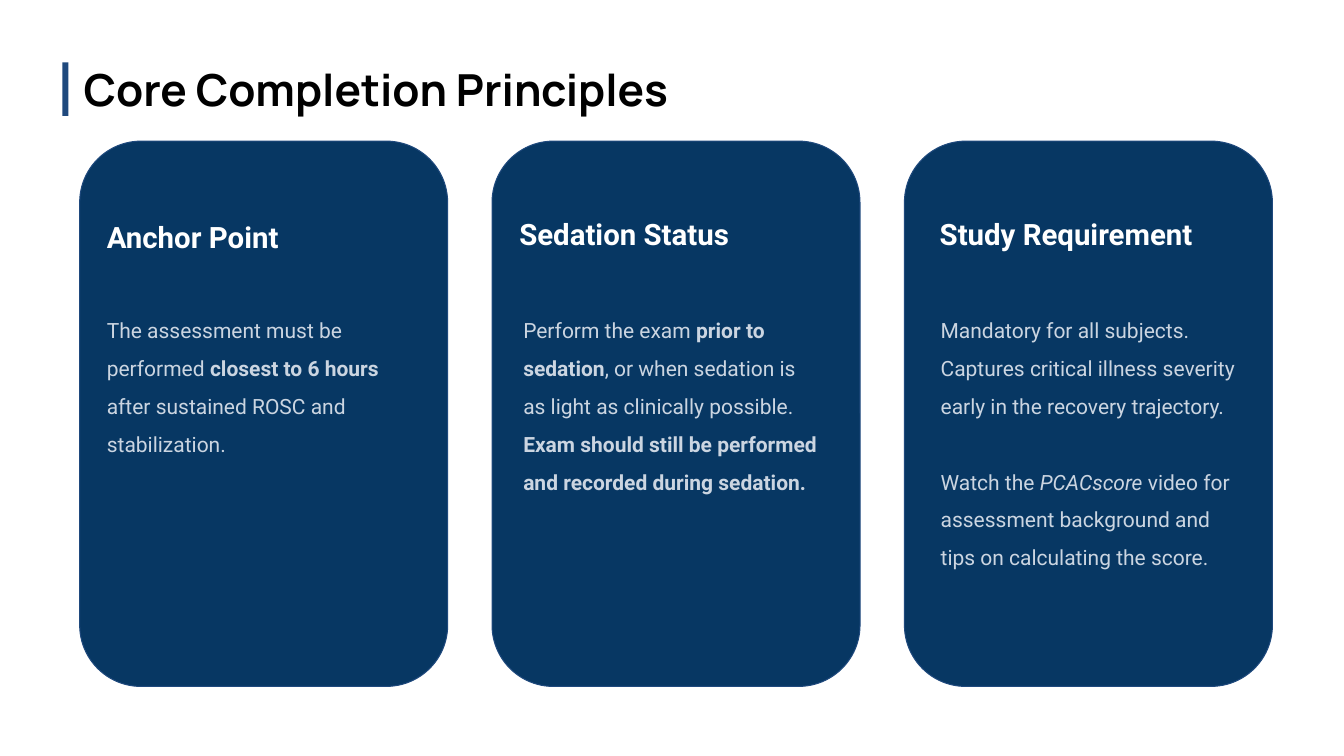
from dataclasses import dataclass

from pptx import Presentation
from pptx.dml.color import RGBColor
from pptx.enum.shapes import MSO_SHAPE
from pptx.enum.text import MSO_ANCHOR, MSO_AUTO_SIZE, PP_ALIGN
from pptx.util import Inches, Pt


@dataclass(frozen=True)
class Theme:
    """Colours, fonts and type sizes of the slide."""
    navy: RGBColor = RGBColor.from_string("073763")
    accent: RGBColor = RGBColor.from_string("1F497D")
    black: RGBColor = RGBColor.from_string("000000")
    white: RGBColor = RGBColor.from_string("FFFFFF")
    pale: RGBColor = RGBColor.from_string("CBD5E1")
    title_font: str = "Manrope"
    body_font: str = "Roboto"
    title_size: float = 31.5
    heading_size: float = 21
    body_size: float = 15
    body_spacing: float = 1.5
    paragraph_gap: float = 27


@dataclass(frozen=True)
class Principle:
    """Wording of one card and where its texts start."""
    heading: str
    heading_left: float
    heading_top: float
    body_left: float
    body_height: float
    paragraphs: tuple
    gap: float = 0


THEME = Theme()
CARD_LEFT, CARD_TOP, CARD_STEP = 0.79, 1.4, 4.09
CARD_WIDTH, CARD_HEIGHT = 3.65, 5.41

PRINCIPLES = (
    Principle("Anchor Point", 1.06, 2.17, 1.06, 1.39, (
        (("The assessment must be performed ", ""),
         ("closest to 6 hours", "bold"),
         (" after sustained ROSC and stabilization.", "")),
    )),
    Principle("Sedation Status", 5.15, 2.14, 5.19, 2.15, (
        (("Perform the exam ", ""),
         ("prior to sedation", "bold"),
         (", or when sedation is as light as clinically possible.", "")),
        (("Exam should still be performed and recorded during sedation.", "bold"),),
    )),
    Principle("Study Requirement", 9.32, 2.14, 9.33, 3.28, (
        (("Mandatory for all subjects. Captures critical illness severity "
          "early in the recovery trajectory.", ""),),
        (("Watch the ", ""),
         ("PCACscore", "italic"),
         (" video for assessment background and tips on calculating the score.", "")),
    ), THEME.paragraph_gap),
)


def add_panel(slide, preset, left, top, width, height, fill, outline=None):
    """Add a flat filled shape, with a thin outline if one is given."""
    panel = slide.shapes.add_shape(
        preset, Inches(left), Inches(top), Inches(width), Inches(height))
    panel.shadow.inherit = False
    panel.fill.solid()
    panel.fill.fore_color.rgb = fill
    if outline is None:
        panel.line.fill.background()
    else:
        panel.line.color.rgb = outline
        panel.line.width = Pt(0.75)


def prepare_frame(frame):
    """Make a text frame wrap from its top left corner without margins."""
    frame.word_wrap = True
    frame.auto_size = MSO_AUTO_SIZE.NONE
    frame.vertical_anchor = MSO_ANCHOR.TOP
    frame.margin_left = frame.margin_right = 0
    frame.margin_top = frame.margin_bottom = 0


def add_run(paragraph, wording, font, size, color, style=""):
    """Add one run of text in the given font and style."""
    run = paragraph.add_run()
    run.text = wording
    run.font.name = font
    run.font.size = Pt(size)
    run.font.color.rgb = color
    run.font.bold = style == "bold"
    run.font.italic = style == "italic"


def add_text(slide, left, top, width, height):
    """Add an empty text box and return its frame."""
    box = slide.shapes.add_textbox(
        Inches(left), Inches(top), Inches(width), Inches(height))
    prepare_frame(box.text_frame)
    return box.text_frame


def set_title(slide, wording):
    """Place and fill the title placeholder."""
    title = slide.shapes.title
    title.left, title.top = Inches(0.83), Inches(0.62)
    title.width, title.height = Inches(12.47), Inches(0.53)
    prepare_frame(title.text_frame)
    line = title.text_frame.paragraphs[0]
    line.alignment = PP_ALIGN.LEFT
    add_run(line, wording, THEME.title_font, THEME.title_size, THEME.black, "bold")


def add_principle(slide, column, principle):
    """Add one card with its heading and body."""
    add_panel(slide, MSO_SHAPE.ROUNDED_RECTANGLE,
              CARD_LEFT + column * CARD_STEP, CARD_TOP, CARD_WIDTH, CARD_HEIGHT,
              THEME.navy, THEME.accent)
    heading = add_text(slide, principle.heading_left, principle.heading_top, 3.11, 0.35)
    add_run(heading.paragraphs[0], principle.heading, THEME.body_font,
            THEME.heading_size, THEME.white, "bold")
    body = add_text(slide, principle.body_left, 3.03, 2.97, principle.body_height)
    for index, runs in enumerate(principle.paragraphs):
        paragraph = body.add_paragraph() if index else body.paragraphs[0]
        paragraph.line_spacing = THEME.body_spacing
        if index and principle.gap:
            paragraph.space_before = Pt(principle.gap)
        for wording, style in runs:
            add_run(paragraph, wording, THEME.body_font, THEME.body_size,
                    THEME.pale, style)


def main():
    """Build the slide and save it."""
    deck = Presentation()
    deck.slide_width, deck.slide_height = Inches(13.33), Inches(7.5)
    slide = deck.slides.add_slide(deck.slide_layouts[5])
    set_title(slide, "Core Completion Principles")
    add_panel(slide, MSO_SHAPE.RECTANGLE, 0.62, 0.62, 0.06, 0.53, THEME.accent)
    for column, principle in enumerate(PRINCIPLES):
        add_principle(slide, column, principle)
    deck.save("out.pptx")


if __name__ == "__main__":
    main()
